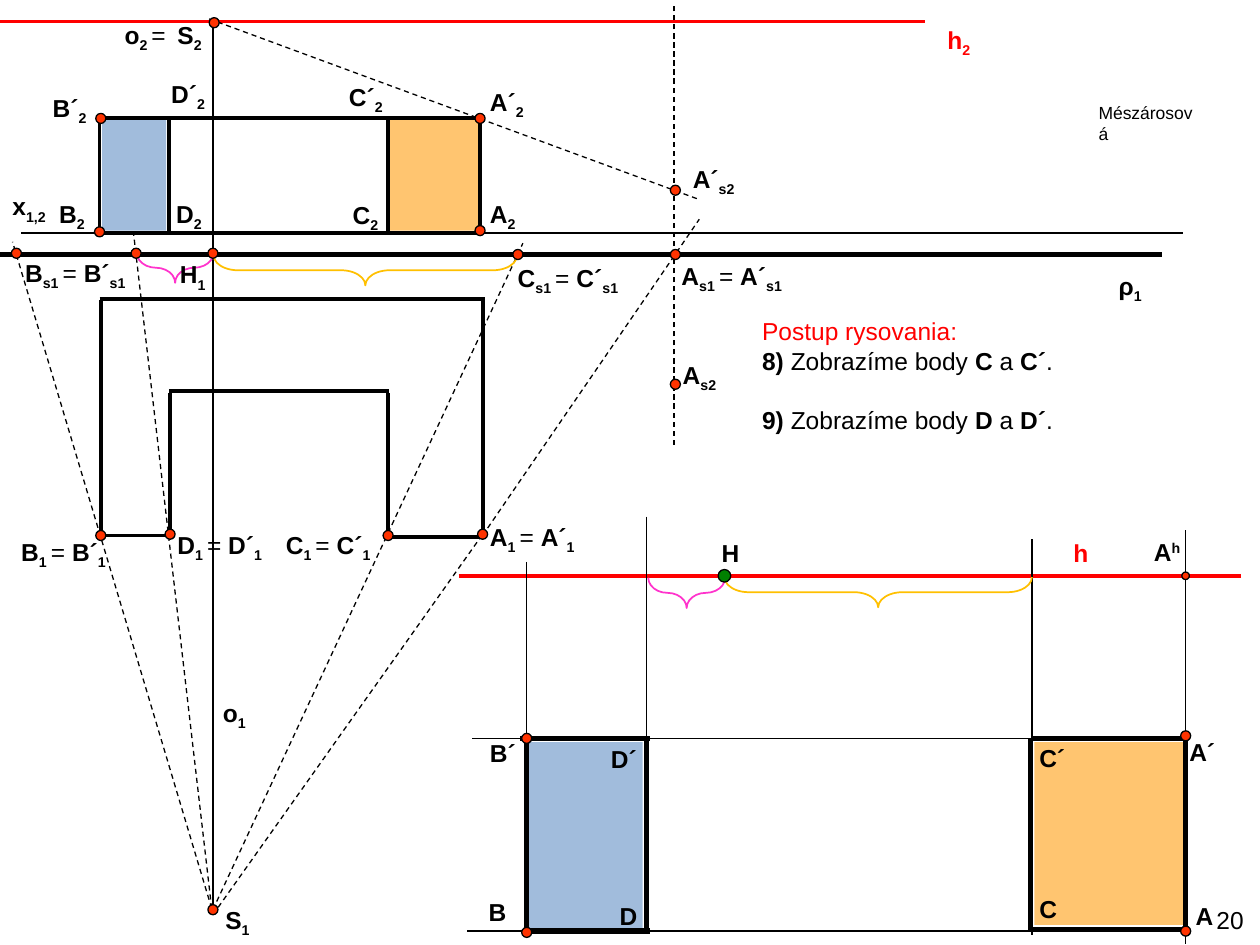
from lxml import etree
from pptx import Presentation
from pptx.dml.color import RGBColor
from pptx.enum.dml import MSO_LINE
from pptx.enum.shapes import MSO_CONNECTOR, MSO_SHAPE
from pptx.enum.text import MSO_ANCHOR, MSO_AUTO_SIZE, PP_ALIGN
from pptx.oxml.ns import qn
from pptx.util import Inches, Pt

BLACK = RGBColor(0x00, 0x00, 0x00)
RED = RGBColor(0xFF, 0x00, 0x00)
POINT_RED = RGBColor(0xFF, 0x33, 0x00)
GREEN = RGBColor(0x00, 0x80, 0x00)
ORANGE = RGBColor(0xFF, 0x99, 0x00)
BLUE = RGBColor(0x4F, 0x81, 0xBD)
GOLD = RGBColor(0xFF, 0xC0, 0x00)
PINK = RGBColor(0xFF, 0x33, 0xCC)

FACES = [
    (8.21, 5.89, 1.18, 1.45, ORANGE, 56), (4.19, 5.89, 0.91, 1.48, BLUE, 53),
    (3.09, 0.95, 0.72, 0.88, ORANGE, 56), (0.81, 0.95, 0.51, 0.88, BLUE, 53),
]
ELEVATION_AND_PLAN = [
    (0.79, 0.94, 0.79, 1.84), (1.34, 0.94, 1.34, 1.85),
    (3.08, 0.94, 3.08, 1.85), (3.81, 0.95, 3.81, 1.85),
    (0.79, 0.94, 3.83, 0.94), (0.78, 1.85, 3.82, 1.85),
    (0.79, 2.37, 3.82, 2.37), (1.34, 3.1, 3.09, 3.1),
    (0.8, 2.38, 0.8, 4.25), (1.35, 3.12, 1.35, 4.27),
    (3.08, 3.12, 3.08, 4.26), (3.83, 2.36, 3.83, 4.27),
    (0.81, 4.25, 1.34, 4.25), (3.09, 4.26, 3.8, 4.26),
]
PERSPECTIVE_EDGES = [
    (8.2, 5.86, 9.39, 5.86), (8.2, 7.38, 9.39, 7.38),
    (8.18, 5.86, 8.18, 7.39), (9.41, 5.86, 9.41, 7.39),
    (4.13, 5.86, 5.16, 5.86), (4.18, 7.39, 5.16, 7.39),
    (5.13, 5.86, 5.13, 7.39), (4.18, 5.87, 4.18, 7.41),
]
GUIDES = [
    (0.17, 1.85, 9.39, 1.85), (9.42, 5.86, 3.75, 5.86), (9.38, 7.39, 3.71, 7.39),
    (9.41, 4.21, 9.41, 7.49), (4.18, 4.46, 4.18, 7.39),
    (8.19, 4.28, 8.19, 7.42), (5.13, 4.1, 5.13, 7.38),
]
SIGHT_RAYS = [
    (1.66, 0.15, 5.54, 1.58), (5.35, 3.53, 5.35, 0.03),
    (1.68, 7.21, 0.1, 1.92), (1.68, 7.21, 1.06, 1.85),
    (1.69, 7.22, 4.15, 1.93), (1.69, 7.26, 3.81, 4.27), (3.83, 4.25, 5.55, 1.74),
]
BRACES = [
    (2.78, 0.94, 2.41, GOLD), (6.85, 3.48, 2.44, GOLD),
    (1.27, 1.82, 0.61, PINK), (5.33, 4.4, 0.61, PINK),
]
POINTS = [
    (3.04, 4.21), (4.07, 1.98), (1.31, 4.2), (1.66, 0.14), (1.65, 1.97),
    (3.77, 1.79), (3.77, 0.9), (3.79, 4.2), (5.32, 1.98), (5.32, 3.01),
    (5.32, 1.47), (9.37, 5.8), (9.37, 7.35), (1.65, 7.18), (0.09, 1.97),
    (0.76, 0.9), (0.75, 1.8), (0.76, 4.21), (4.14, 5.82), (4.14, 7.36), (1.04, 1.97),
]
LABELS = [
    ("ρ|_1", 8.78, 2.1, 0.45), ("x|_1,2", 0, 1.47, 0.49), ("o|_1", 1.67, 5.49, 0.39),
    ("B", 3.78, 7.07, 0.34), ("B´", 3.79, 5.81, 0.41),
    ("B´|_2", 0.32, 0.69, 0.48), ("B|_2", 0.37, 1.53, 0.42),
    ("C", 8.15, 7.05, 0.34), ("C´", 8.15, 5.85, 0.41),
    ("C´|_2", 2.67, 0.6, 0.48), ("C|_2", 2.7, 1.54, 0.42),
    ("D", 4.82, 7.1, 0.34), ("D´", 4.75, 5.86, 0.41),
    ("D´|_2", 1.26, 0.58, 0.48), ("D|_2", 1.3, 1.53, 0.42),
    ("A", 9.39, 7.1, 0.34), ("A´", 9.34, 5.8, 0.41),
    ("A´|_2", 3.79, 0.64, 0.48), ("A|_2", 3.79, 1.53, 0.42),
    ("A|_s2", 5.32, 2.81, 0.49), ("A´|_s2", 5.4, 1.25, 0.56),
    ("A|^h", 9.06, 4.21, 0.42), ("S|_1", 1.69, 7.13, 0.41),
    ("S|_2", 1.31, 0.11, 0.41), ("o|_2 |-=", 0.89, 0.11, 0.6),
    ("H|_1", 1.33, 2.01, 0.42), ("H", 5.63, 4.22, 0.34),
]
COINCIDENT_LABELS = [
    ("B", "1", 0.07, 4.21, 0.9), ("C", "1", 2.17, 4.16, 0.9),
    ("D", "1", 1.31, 4.16, 0.9), ("A", "1", 3.79, 4.09, 0.9),
    ("B", "s1", 0.1, 2, 1.05), ("C", "s1", 4.01, 2.04, 1.05),
    ("A", "s1", 5.31, 2.02, 1.05),
]
BASELINES = {"_": "-25000", "^": "30000"}


def add_line(slide, ends, width, color=BLACK, dashed=False):
    line = slide.shapes.add_connector(MSO_CONNECTOR.STRAIGHT, *map(Inches, ends))
    line.line.width = Pt(width)
    line.line.color.rgb = color
    if dashed:
        line.line.dash_style = MSO_LINE.DASH
    etree.SubElement(line._element.spPr, qn("a:effectLst"))


def add_face(slide, left, top, width, height, color, opacity):
    face = slide.shapes.add_shape(MSO_SHAPE.RECTANGLE, *map(Inches, (left, top, width, height)))
    face.shadow.inherit = False
    face.fill.solid()
    face.fill.fore_color.rgb = color
    face.line.fill.background()
    solid = face._element.spPr.find(qn("a:solidFill"))
    etree.SubElement(solid[0], qn("a:alpha"), val=str(opacity * 1000))


def add_brace(slide, left, top, span, color):
    brace = slide.shapes.add_shape(MSO_SHAPE.LEFT_BRACE, *map(Inches, (left, top, 0.24, span)))
    brace.shadow.inherit = False
    brace.rotation = 270
    brace.adjustments[0] = 0.8
    brace.fill.background()
    brace.line.color.rgb = color
    brace.line.width = Pt(1)


def add_point(slide, left, top, size=0.08, color=POINT_RED):
    point = slide.shapes.add_shape(MSO_SHAPE.OVAL, *map(Inches, (left, top, size, size)))
    point.shadow.inherit = False
    point.fill.solid()
    point.fill.fore_color.rgb = color
    point.line.color.rgb = BLACK
    point.line.width = Pt(0.75)


def add_text(slide, text, left, top, width, height=0.34, size=14, colors=(BLACK,),
             wrap=False, align=PP_ALIGN.LEFT, anchor=MSO_ANCHOR.TOP, hanging=0, gaps=(0,)):
    box = slide.shapes.add_textbox(*map(Inches, (left, top, width, height)))
    frame = box.text_frame
    frame.word_wrap = wrap
    frame.auto_size = MSO_AUTO_SIZE.SHAPE_TO_FIT_TEXT
    frame.vertical_anchor = anchor
    for index, (row, color, gap) in enumerate(zip(text.split("\n"), colors, gaps)):
        paragraph = frame.add_paragraph() if index else frame.paragraphs[0]
        paragraph.alignment = align
        if gap:
            paragraph.space_before = Pt(gap)
        if hanging:
            properties = paragraph._p.get_or_add_pPr()
            properties.set("marL", str(Inches(hanging)))
            properties.set("indent", str(-Inches(hanging)))
        for part in row.split("|"):
            mark = part[0] if part[0] in "_^-" else ""
            run = paragraph.add_run()
            run.text = part[len(mark):]
            run.font.name = "Arial"
            run.font.size = Pt(size)
            run.font.bold = mark != "-"
            run.font.color.rgb = color
            if mark in BASELINES:
                run.font._element.set("baseline", BASELINES[mark])


def main():
    deck = Presentation()
    deck.slide_width, deck.slide_height = Inches(10), Inches(7.5)
    slide = deck.slides.add_slide(deck.slide_layouts[6])

    for face in FACES:
        add_face(slide, *face)
    for ends in ELEVATION_AND_PLAN:
        add_line(slide, ends, 2.25)
    add_line(slide, (1.69, 0.16, 1.69, 7.22), 1.5)
    add_line(slide, (0, 2.02, 9.22, 2.02), 3)
    add_line(slide, (-0.03, 0.17, 7.34, 0.17), 1.5, RED)
    add_line(slide, (3.64, 4.57, 9.85, 4.57), 2.25, RED)
    for ends in GUIDES:
        add_line(slide, ends, 0.75)
    for ends in SIGHT_RAYS:
        add_line(slide, ends, 0.75, dashed=True)
    for ends in PERSPECTIVE_EDGES:
        add_line(slide, ends, 3)
    for brace in BRACES:
        add_brace(slide, *brace)

    for label in LABELS:
        add_text(slide, *label)
    for name, index, left, top, width in COINCIDENT_LABELS:
        add_text(slide, f"{name}|_{index} |-= |{name}´|_{index}", left, top, width)
    add_text(slide, "h|_2", 7.42, 0.15, 0.39, colors=(RED,))
    add_text(slide, "h", 8.42, 4.22, 0.32, colors=(RED,))

    for left, top in POINTS:
        add_point(slide, left, top)
    add_point(slide, 9.38, 4.54, size=0.06)
    add_point(slide, 5.7, 4.52, size=0.1, color=GREEN)

    steps = ("-Postup rysovania:\n"
             "8) |-Zobrazíme body |C |-a |C´|-.\n"
             "9) |-Zobrazíme body |D |-a |D´|-.")
    add_text(slide, steps, 5.95, 2.46, 2.52, 1.04, colors=(RED, BLACK, BLACK),
             wrap=True, hanging=0.38, gaps=(0, 0, 17))
    add_text(slide, "-Mészárosová", 8.62, 0.76, 0.95, 0.27, size=10, wrap=True)
    add_text(slide, "-20", 9.53, 7.13, 0.44, align=PP_ALIGN.RIGHT, anchor=MSO_ANCHOR.MIDDLE)
    deck.save("out.pptx")


if __name__ == "__main__":
    main()
